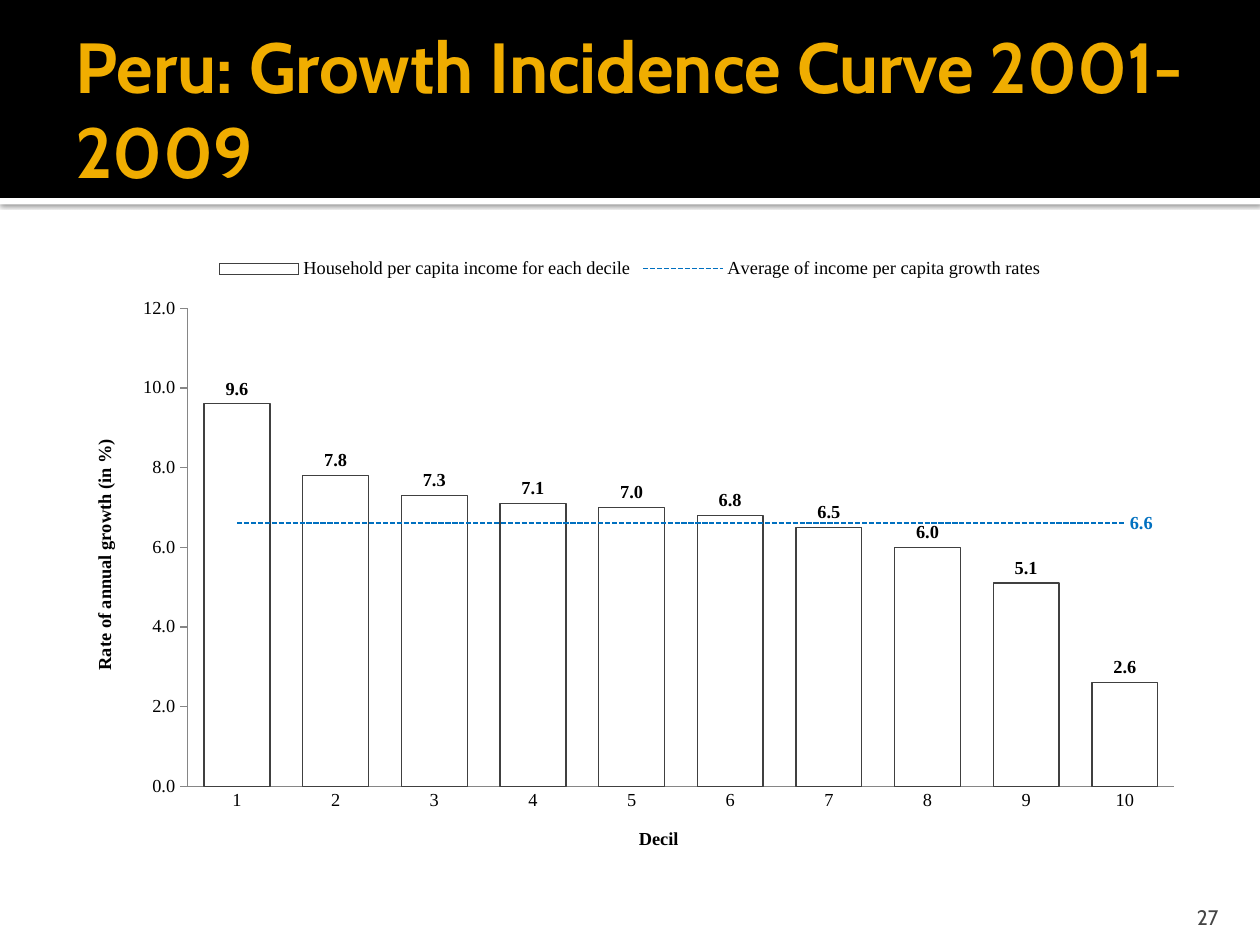
import dataclasses

import pptx
import pptx.chart.data
import pptx.dml.color
import pptx.enum.chart
import pptx.enum.dml
import pptx.enum.shapes
import pptx.enum.text
import pptx.oxml
import pptx.oxml.ns
import pptx.util
from pptx.util import Cm


@dataclasses.dataclass(frozen=True)
class Theme:
    heading_font: str = "Cabin"
    chart_font: str = "Times New Roman"
    black: str = "000000"
    white: str = "FFFFFF"
    gold: str = "F0AD00"
    blue: str = "0070C0"
    outline: str = "404040"
    axis: str = "868686"
    number: str = "454545"
    title_size: float = 40.5
    number_size: float = 12
    chart_size: float = 10.5


theme = Theme()


def rgb(value):
    return pptx.dml.color.RGBColor.from_string(value)


def write(frame, text, size, color, font, bold=False, align=None):
    paragraph = frame.paragraphs[0]
    paragraph.alignment = align
    run = paragraph.add_run()
    run.text = text
    run.font.size = pptx.util.Pt(size)
    run.font.name = font
    run.font.bold = bold
    run.font.color.rgb = rgb(color)


NAMESPACES = pptx.oxml.ns.nsdecls("a", "c")

deck = pptx.Presentation()
deck.slide_width, deck.slide_height = Cm(25.4), Cm(19.05)
slide = deck.slides.add_slide(deck.slide_layouts[5])

bands = []
for top, height, color in [(3.99, 0.13, theme.white), (0, 3.99, theme.black)]:
    band = slide.shapes.add_shape(
        pptx.enum.shapes.MSO_SHAPE.RECTANGLE, 0, Cm(top), deck.slide_width, Cm(height))
    band.shadow.inherit = False
    band.fill.solid()
    band.fill.fore_color.rgb = rgb(color)
    band.line.fill.background()
    bands.append(band)

rule_effects = bands[0]._element.spPr.find(pptx.oxml.ns.qn("a:effectLst"))
rule_effects.append(pptx.oxml.parse_xml(
    f'<a:outerShdw {NAMESPACES} blurRad="31750" dist="10160" dir="5400000" algn="tl" rotWithShape="0">'
    f'<a:srgbClr val="{theme.black}"><a:alpha val="60000"/></a:srgbClr></a:outerShdw>'))

heading = slide.shapes.title
bands[-1]._element.addnext(heading._element)
heading.left, heading.top, heading.width, heading.height = Cm(1.27), Cm(0.43), Cm(22.86), Cm(3.48)
frame = heading.text_frame
frame.auto_size = pptx.enum.text.MSO_AUTO_SIZE.NONE
frame.word_wrap = True
frame.vertical_anchor = pptx.enum.text.MSO_ANCHOR.MIDDLE
frame.margin_left = Cm(0.25)
frame.margin_right = frame.margin_top = frame.margin_bottom = Cm(0.13)
write(frame, "Peru: Growth Incidence Curve 2001-2009", theme.title_size, theme.gold,
      theme.heading_font, bold=True, align=pptx.enum.text.PP_ALIGN.LEFT)

page = slide.shapes.add_textbox(Cm(22.78), Cm(17.98), Cm(2.03), Cm(0.76)).text_frame
page.word_wrap = True
page.vertical_anchor = pptx.enum.text.MSO_ANCHOR.BOTTOM
page.margin_bottom = 0
write(page, "27", theme.number_size, theme.number, theme.heading_font,
      align=pptx.enum.text.PP_ALIGN.RIGHT)

growth = [9.6, 7.8, 7.3, 7.1, 7.0, 6.8, 6.5, 6.0, 5.1, 2.6]
data = pptx.chart.data.CategoryChartData(number_format="#,##0.0")
data.categories = range(1, len(growth) + 1)
data.add_series("Household per capita income for each decile", growth)
data.add_series("Average of income per capita growth rates", [6.6] * len(growth))
chart = slide.shapes.add_chart(
    pptx.enum.chart.XL_CHART_TYPE.COLUMN_CLUSTERED,
    Cm(1.27), Cm(4.93), Cm(22.86), Cm(12.85), data).chart
chart.has_title = False
chart.font.name = theme.chart_font
chart.font.size = pptx.util.Pt(theme.chart_size)
chart.font.color.rgb = rgb(theme.black)
chart.has_legend = True
chart.legend.position = pptx.enum.chart.XL_LEGEND_POSITION.TOP
chart.legend.include_in_layout = False

tick = pptx.enum.chart.XL_TICK_MARK
for axis, caption, mark in [(chart.category_axis, "Decil", tick.NONE),
                            (chart.value_axis, "Rate of annual growth (in %)", tick.OUTSIDE)]:
    axis.has_major_gridlines = False
    axis.major_tick_mark = mark
    axis.minor_tick_mark = tick.NONE
    axis.format.line.color.rgb = rgb(theme.axis)
    axis.format.line.width = pptx.util.Pt(0.75)
    write(axis.axis_title.text_frame, caption, theme.chart_size, theme.black,
          theme.chart_font, bold=True)
chart.value_axis.minimum_scale = 0
chart.value_axis.maximum_scale = 12
chart.value_axis.major_unit = 2
chart.value_axis.tick_labels.number_format = "#,##0.0"
chart.value_axis.tick_labels.number_format_is_linked = False

columns = chart.plots[0]
columns.gap_width = 50
columns.vary_by_categories = False
deciles = columns.series[0]
deciles.format.fill.solid()
deciles.format.fill.fore_color.rgb = rgb(theme.white)
deciles.format.line.color.rgb = rgb(theme.outline)
deciles.format.line.width = pptx.util.Pt(0.75)
labels = deciles.data_labels
labels.show_value = True
labels.position = pptx.enum.chart.XL_LABEL_POSITION.OUTSIDE_END
labels.number_format = "#,##0.0"
labels.number_format_is_linked = False
labels.font.bold = True

bar_chart = chart._chartSpace.find(".//" + pptx.oxml.ns.qn("c:barChart"))
plot_area = bar_chart.getparent()
average_xml = bar_chart.findall(pptx.oxml.ns.qn("c:ser"))[1]
for bar_setting in average_xml.findall(pptx.oxml.ns.qn("c:invertIfNegative")):
    average_xml.remove(bar_setting)
axis_ids = "".join(f'<c:axId val="{item.get("val")}"/>'
                   for item in bar_chart.findall(pptx.oxml.ns.qn("c:axId")))
line_chart = pptx.oxml.parse_xml(
    f'<c:lineChart {NAMESPACES}><c:grouping val="standard"/><c:varyColors val="0"/>'
    f'<c:marker val="1"/>{axis_ids}</c:lineChart>')
line_chart.insert(2, average_xml)
bar_chart.addnext(line_chart)

average = chart.plots[1].series[0]
average.smooth = False
average.marker.style = pptx.enum.chart.XL_MARKER_STYLE.NONE
average.format.line.color.rgb = rgb(theme.blue)
average.format.line.width = pptx.util.Pt(1)
average.format.line.dash_style = pptx.enum.dml.MSO_LINE.SQUARE_DOT
average.data_labels.show_value = False
end_label = average.points[len(growth) - 1].data_label
end_label.position = pptx.enum.chart.XL_LABEL_POSITION.RIGHT
end_label.font.bold = True
end_label.font.color.rgb = rgb(theme.blue)

for old_layout in plot_area.findall(pptx.oxml.ns.qn("c:layout")):
    plot_area.remove(old_layout)
placement = "".join(f'<c:{key} val="{value}"/>' for key, value in [
    ("layoutTarget", "inner"), ("xMode", "edge"), ("yMode", "edge"),
    ("x", 0.11), ("y", 0.1), ("w", 0.87), ("h", 0.75)])
plot_area.insert(0, pptx.oxml.parse_xml(
    f'<c:layout {NAMESPACES}><c:manualLayout>{placement}</c:manualLayout></c:layout>'))

deck.save("out.pptx")
